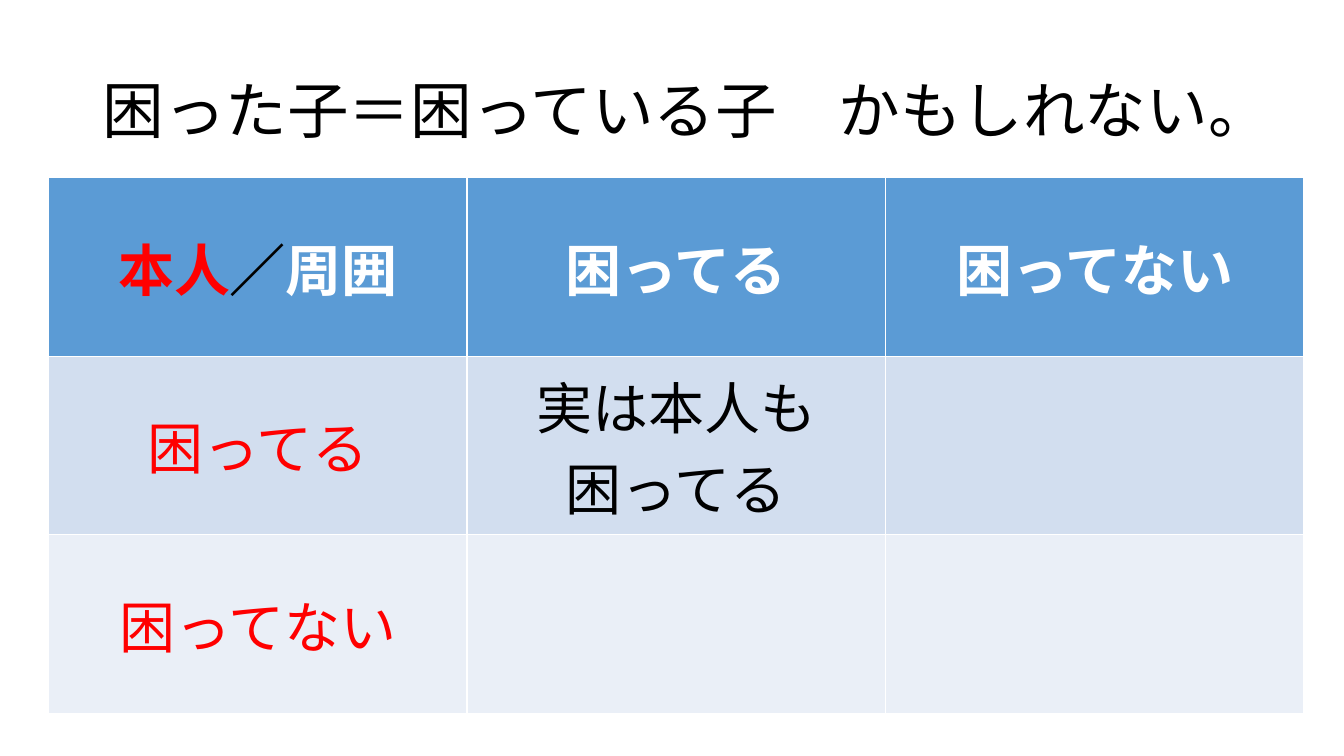
from dataclasses import dataclass

from pptx import Presentation
from pptx.dml.color import RGBColor
from pptx.enum.text import MSO_ANCHOR, MSO_AUTO_SIZE, PP_ALIGN
from pptx.util import Pt


@dataclass(frozen=True)
class Theme:
    font: str = "Calibri"
    title_size: int = 44
    cell_size: int = 40
    black: str = "000000"
    white: str = "FFFFFF"
    red: str = "FF0000"
    row_fills: tuple = ("5B9BD5", "D2DEEF", "EAEFF7")


class SlideBuilder:
    def __init__(self, presentation, theme):
        self.theme = theme
        self.slide = presentation.slides.add_slide(presentation.slide_layouts[5])

    def style(self, font, size, color=None, bold=False):
        font.name = self.theme.font
        font.size = Pt(size)
        font.bold = bold
        if color:
            font.color.rgb = RGBColor.from_string(color)

    def title(self, text, left, top, width, height):
        shape = self.slide.shapes.title
        shape.left, shape.top, shape.width, shape.height = map(Pt, (left, top, width, height))
        frame = shape.text_frame
        frame.text = text
        frame.word_wrap = True
        frame.auto_size = MSO_AUTO_SIZE.NONE
        frame.vertical_anchor = MSO_ANCHOR.MIDDLE
        paragraph = frame.paragraphs[0]
        paragraph.alignment = PP_ALIGN.LEFT
        paragraph.line_spacing = 0.9
        self.style(paragraph.font, self.theme.title_size, self.theme.black)

    def cell(self, cell, paragraphs, fill, bold):
        cell.fill.solid()
        cell.fill.fore_color.rgb = RGBColor.from_string(fill)
        cell.vertical_anchor = MSO_ANCHOR.MIDDLE
        frame = cell.text_frame
        for index, runs in enumerate(paragraphs):
            paragraph = frame.paragraphs[0] if index == 0 else frame.add_paragraph()
            paragraph.alignment = PP_ALIGN.CENTER
            self.style(paragraph.font, self.theme.cell_size, bold=bold)
            for text, color in runs:
                run = paragraph.add_run()
                run.text = text
                self.style(run.font, self.theme.cell_size, color, bold)

    def table(self, rows, left, top, width, height):
        frame = self.slide.shapes.add_table(
            len(rows), len(rows[0]), Pt(left), Pt(top), Pt(width), Pt(height))
        for row_index, row in enumerate(rows):
            for column_index, paragraphs in enumerate(row):
                self.cell(frame.table.cell(row_index, column_index), paragraphs,
                          self.theme.row_fills[row_index], bold=row_index == 0)


def main():
    presentation = Presentation()
    presentation.slide_width, presentation.slide_height = Pt(960), Pt(540)
    theme = Theme()
    builder = SlideBuilder(presentation, theme)
    builder.title("困った子＝困っている子　かもしれない。", 66, 28.8, 828, 104.4)

    troubled, untroubled = "困ってる", "困ってない"
    person_and_others = [("本人", theme.red), ("／", theme.black), ("周囲", theme.white)]
    both_troubled = [[("実は本人も", theme.black)], [(troubled, theme.black)]]
    rows = [
        [[person_and_others], [[(troubled, theme.white)]], [[(untroubled, theme.white)]]],
        [[[(troubled, theme.red)]], both_troubled, []],
        [[[(untroubled, theme.red)]], [], []],
    ]
    builder.table(rows, 34.8, 126.8, 896.4, 382.8)
    presentation.save("out.pptx")


if __name__ == "__main__":
    main()
